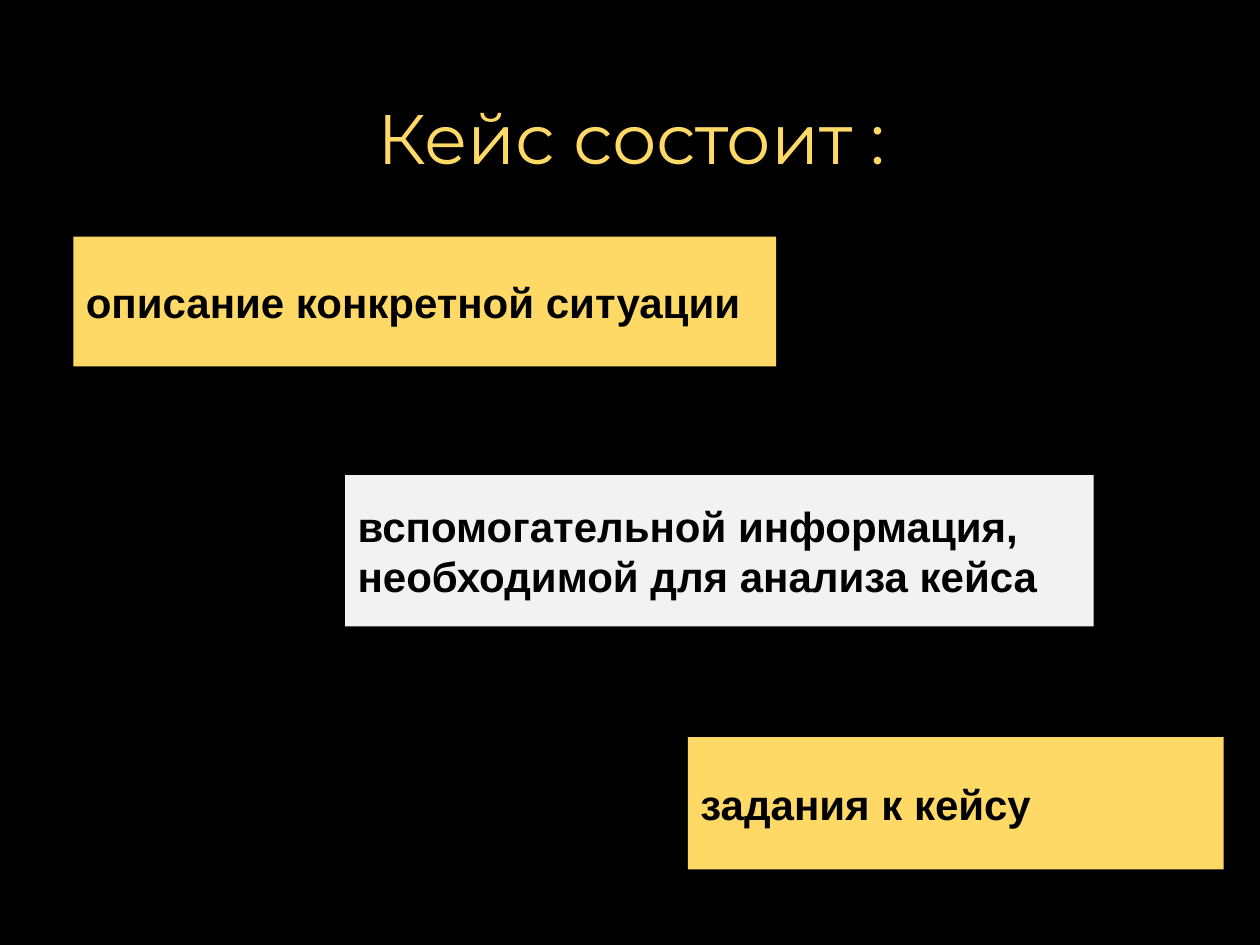
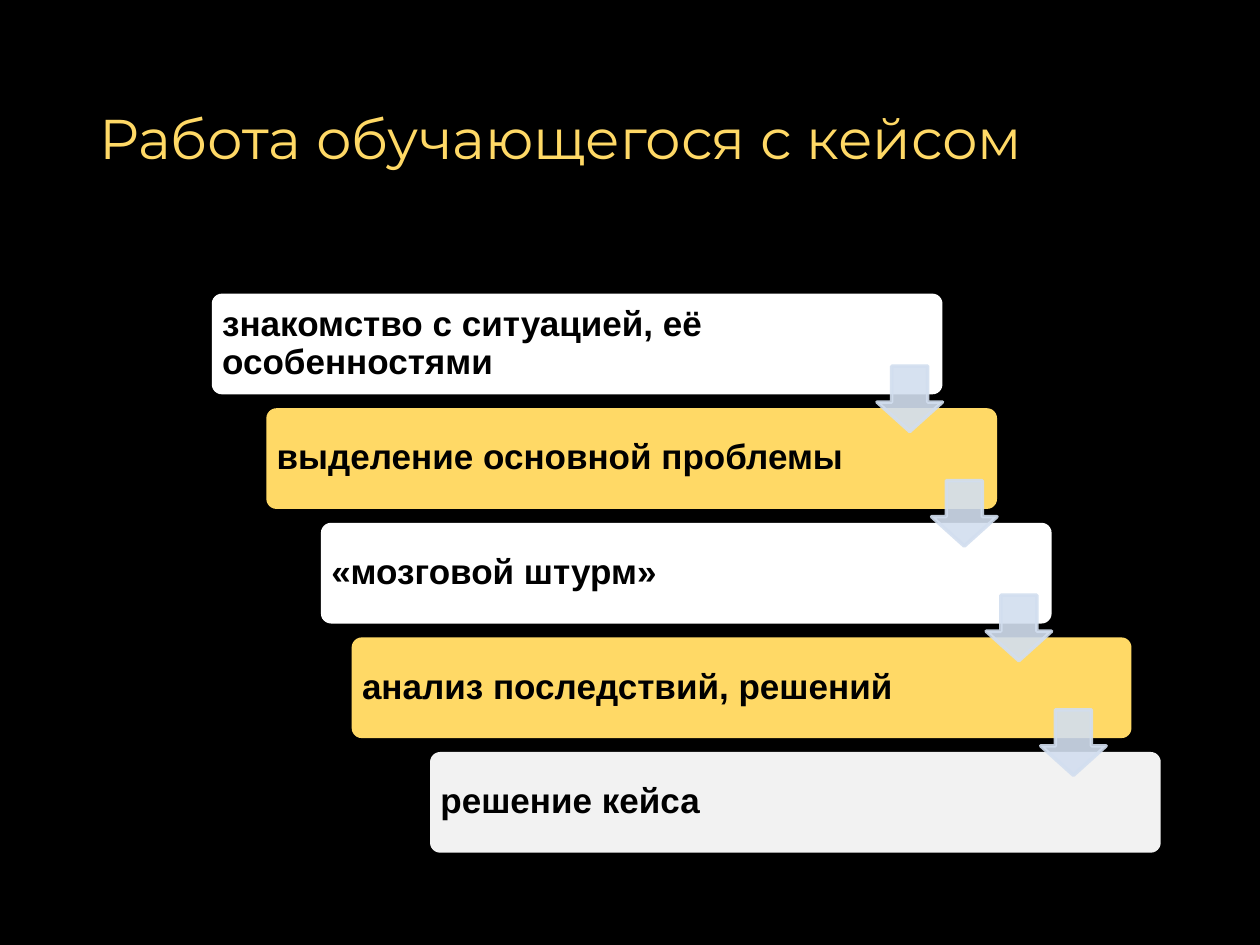
from lxml.etree import SubElement
from pptx import Presentation
from pptx.dml.color import RGBColor
from pptx.enum.shapes import MSO_SHAPE
from pptx.enum.text import MSO_ANCHOR, PP_ALIGN
from pptx.oxml.ns import qn
from pptx.util import Cm, Pt

BLACK, WHITE, GOLD = "000000", "FFFFFF", "FFD966"
GREY, PALE_BLUE = "F2F2F2", "D2DEEF"
TITLE_FONT, BODY_FONT = "Montserrat", "Arial"

PARTS = [
    ("вспомогательной информация, необходимой для анализа кейса",
     (6.96, 9.58, 15.09, 3.05), GREY),
    ("описание конкретной ситуации", (1.48, 4.77, 14.17, 2.62), GOLD),
    ("задания к кейсу", (13.87, 14.86, 10.8, 2.67), GOLD),
]

STEP_LEFT, STEP_TOP, STEP_WIDTH, STEP_HEIGHT = 4.27, 5.92, 14.73, 2.03
STEP_DX, STEP_DY = 1.1, 2.31
ARROW_LEFT, ARROW_TOP, ARROW_SIZE = 17.68, 7.38, 1.32
STEPS = [
    ("знакомство с ситуацией, её особенностями", WHITE),
    ("выделение основной проблемы", GOLD),
    ("«мозговой штурм»", WHITE),
    ("анализ последствий, решений", GOLD),
    ("решение кейса", GREY),
]
WIDE_STEP, WIDE_LEFT, WIDE_WIDTH = 3, 7.09, 15.72


def paint(color_format, color):
    color_format.solid()
    color_format.fore_color.rgb = RGBColor.from_string(color)


def set_alpha(color_format, percent):
    color = color_format._xPr.find(qn("a:solidFill"))[0]
    SubElement(color, qn("a:alpha")).set("val", str(percent * 1000))


def add_slide(prs):
    s = prs.slides.add_slide(prs.slide_layouts[6])
    paint(s.background.fill, BLACK)
    return s


def write(sp, text, size, color, font=BODY_FONT, bold=True,
          align=PP_ALIGN.LEFT, spacing=1.0):
    tf = sp.text_frame
    tf.word_wrap = True
    tf.vertical_anchor = MSO_ANCHOR.MIDDLE
    p = tf.paragraphs[0]
    p.alignment = align
    p.line_spacing = spacing
    r = p.add_run()
    r.text = text
    r.font.name = font
    r.font.size = Pt(size)
    r.font.bold = bold
    paint(r.font.fill, color)


def add_title(s, text, left, width, size, align):
    sp = s.shapes.add_textbox(Cm(left), Cm(1.02), Cm(width), Cm(3.68))
    write(sp, text, size, GOLD, TITLE_FONT, False, align, 0.9)


def add_block(s, kind, box, color, adjustments=()):
    sp = s.shapes.add_shape(kind, *map(Cm, box))
    sp.shadow.inherit = False
    paint(sp.fill, color)
    sp.line.fill.background()
    for i, value in enumerate(adjustments):
        sp.adjustments[i] = value
    return sp


def add_step(s, i, text, color):
    left, width = STEP_LEFT + i * STEP_DX, STEP_WIDTH
    if i == WIDE_STEP:
        left, width = WIDE_LEFT, WIDE_WIDTH
    box = (left, STEP_TOP + i * STEP_DY, width, STEP_HEIGHT)
    sp = add_block(s, MSO_SHAPE.ROUNDED_RECTANGLE, box, color, [0.1])
    sp.text_frame.margin_left = Cm(0.15)
    sp.text_frame.margin_right = Cm(2.5)
    write(sp, text, 20, BLACK, spacing=0.9)


def add_arrow(s, i):
    box = (ARROW_LEFT + i * STEP_DX, ARROW_TOP + i * STEP_DY,
           ARROW_SIZE, ARROW_SIZE)
    sp = add_block(s, MSO_SHAPE.DOWN_ARROW, box, PALE_BLUE, [0.45, 0.55])
    sp.adjustments[0], sp.adjustments[1] = 0.55, 0.45
    sp.line.width = Pt(2)
    paint(sp.line.fill, PALE_BLUE)
    set_alpha(sp.fill, 90)
    set_alpha(sp.line.fill, 90)


def build_parts(prs):
    s = add_slide(prs)
    add_title(s, "Кейс состоит :", 0.58, 24.31, 40, PP_ALIGN.CENTER)
    for text, box, color in PARTS:
        write(add_block(s, MSO_SHAPE.RECTANGLE, box, color), text, 24, BLACK)


def build_steps(prs):
    s = add_slide(prs)
    add_title(s, "Работа обучающегося с кейсом", 1.75, 21.89, 32, PP_ALIGN.LEFT)
    for i, (text, color) in enumerate(STEPS):
        add_step(s, i, text, color)
    for i in range(len(STEPS) - 1):
        add_arrow(s, i)


def main():
    prs = Presentation()
    prs.slide_width, prs.slide_height = Cm(25.4), Cm(19.05)
    build_parts(prs)
    build_steps(prs)
    prs.save("out.pptx")


if __name__ == "__main__":
    main()
